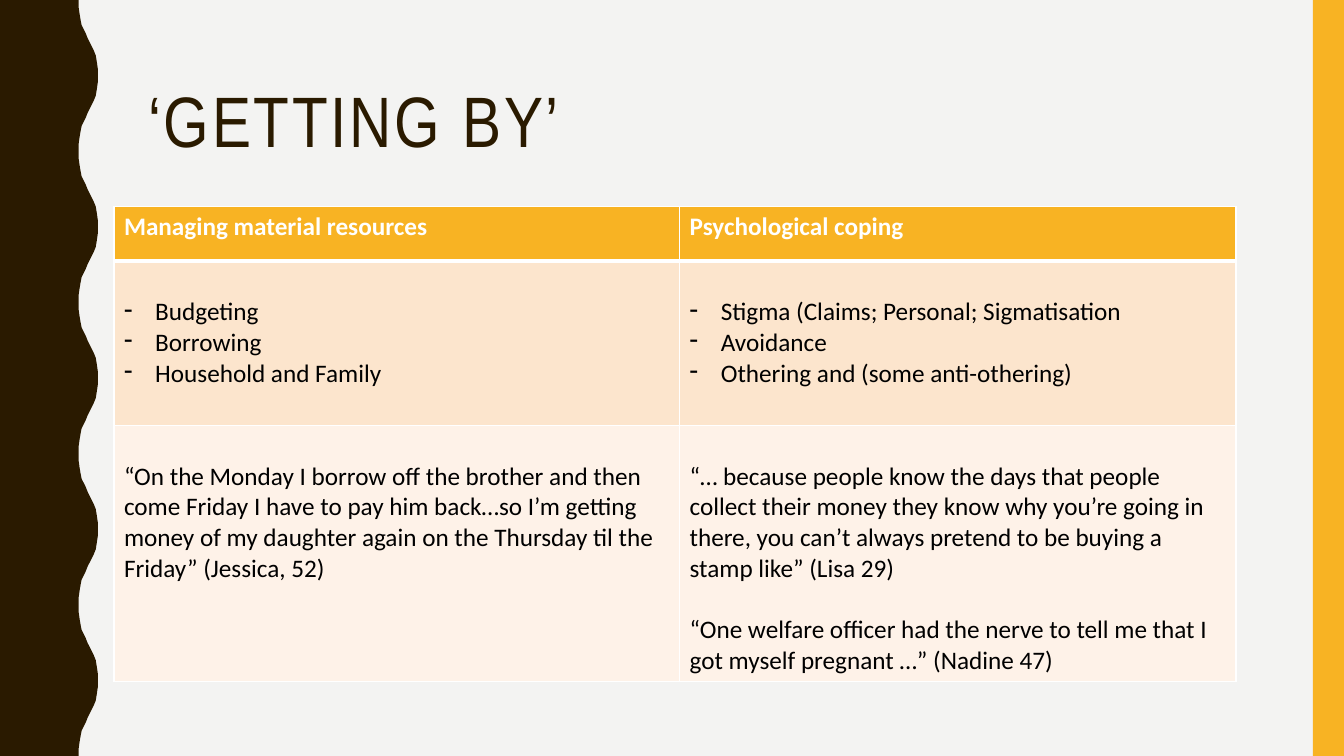
"""Build the 'Getting by' slide: a titled two-column table between a wavy band and a side bar."""
import pptx
import pptx.dml.color
import pptx.enum.shapes
import pptx.enum.text
import pptx.oxml
import pptx.oxml.ns
import pptx.util

Inches, Pt = pptx.util.Inches, pptx.util.Pt

TITLE = "‘GETTING BY’"
HEADINGS = ["Managing material resources", "Psychological coping"]
STRATEGIES = [
    ["Budgeting", "Borrowing", "Household and Family"],
    ["Stigma (Claims; Personal; Sigmatisation", "Avoidance",
     "Othering and (some anti-othering)"],
]
QUOTES = [
    ["“On the Monday I borrow off the brother and then come Friday I have to pay him "
     "back…so I’m getting money of my daughter again on the Thursday til the Friday” "
     "(Jessica, 52)"],
    ["“… because people know the days that people collect their money they know why "
     "you’re going in there, you can’t always pretend to be buying a stamp like” (Lisa 29)",
     "“One welfare officer had the nerve to tell me that I got myself pregnant …” "
     "(Nadine 47)"],
]
THEME = {
    "background": "F3F3F2", "dark": "2A1A00", "accent": "F8B323",
    "strategy_fill": "FCE5CD", "quote_fill": "FEF2E8",
    "white": "FFFFFF", "black": "000000",
    "title_font": "Arial Narrow", "body_font": "Calibri",
    "title_size": 51, "body_size": 18,
}
SLIDE_W, SLIDE_H = 13.33, 7.5
BAR_W = 0.31
TITLE_BOX = (1.37, 0.42, 11.13, 1.63)
TABLE_AT = (1.13, 2.05)
COLUMNS = [5.61, 5.52]
ROWS = [0.54, 1.63, 2.54]
LINE_H = 0.305
CELL_INSET = 0.05
INDENT = 0.31
WAVE_PERIOD = 1.5
HALF_WAVE = [
    (0.78, 0), (0.78, 0.07), (0.79, 0.14), (0.8, 0.2), (0.81, 0.25), (0.83, 0.29),
    (0.85, 0.33), (0.87, 0.38), (0.89, 0.42), (0.91, 0.46), (0.93, 0.5),
    (0.95, 0.55), (0.96, 0.61), (0.97, 0.68), (0.97, 0.75),
]


def color(name):
    return pptx.dml.color.RGBColor.from_string(THEME[name])


def paint(sp, name):
    sp.shadow.inherit = False
    sp.fill.solid()
    sp.fill.fore_color.rgb = color(name)
    sp.line.fill.background()


def add_run(p, text, kind, name, bold=False):
    r = p.add_run()
    r.text = text
    r.font.name = THEME[kind + "_font"]
    r.font.size = Pt(THEME[kind + "_size"])
    r.font.bold = bold
    r.font.color.rgb = color(name)
    return r


def add_wave(slide):
    mirrored = [(x, WAVE_PERIOD - y) for x, y in HALF_WAVE[-2::-1]]
    wave = HALF_WAVE + mirrored[:-1]
    edge = [(x, y + n * WAVE_PERIOD)
            for n in range(round(SLIDE_H / WAVE_PERIOD)) for x, y in wave]
    edge += [(HALF_WAVE[0][0], SLIDE_H), (0, SLIDE_H)]
    builder = slide.shapes.build_freeform(0, 0)
    builder.add_line_segments([(Inches(x), Inches(y)) for x, y in edge], close=True)
    paint(builder.convert_to_shape(), "dark")


def add_bar(slide):
    sp = slide.shapes.add_shape(
        pptx.enum.shapes.MSO_SHAPE.RECTANGLE,
        Inches(SLIDE_W - BAR_W), 0, Inches(BAR_W), Inches(SLIDE_H))
    paint(sp, "accent")


def add_title(slide):
    tf = slide.shapes.add_textbox(*map(Inches, TITLE_BOX)).text_frame
    tf.word_wrap = True
    tf.vertical_anchor = pptx.enum.text.MSO_ANCHOR.MIDDLE
    p = tf.paragraphs[0]
    p.line_spacing = 0.9
    r = add_run(p, TITLE, "title", "dark")
    r.font._element.set("spc", "200")


def set_borders(cell, top, bottom):
    props = cell._tc.get_or_add_tcPr()
    sides = [("L", 1), ("R", 1), ("T", top), ("B", bottom)]
    for i, (side, width) in enumerate(sides):
        props.insert(i, pptx.oxml.parse_xml(
            f'<a:ln{side} {pptx.oxml.ns.nsdecls("a")} w="{Pt(width)}"><a:solidFill>'
            f'<a:srgbClr val="{THEME["white"]}"/></a:solidFill></a:ln{side}>'))


def set_dash(p):
    props = p._p.get_or_add_pPr()
    props.set("marL", str(Inches(INDENT)))
    props.set("indent", str(-Inches(INDENT)))
    props.append(pptx.oxml.parse_xml(
        f'<a:buChar {pptx.oxml.ns.nsdecls("a")} char="-"/>'))


def fill_cell(cell, lines, row):
    fill = ["accent", "strategy_fill", "quote_fill"][row]
    cell.fill.solid()
    cell.fill.fore_color.rgb = color(fill)
    set_borders(cell, 3 if row == 1 else 1, 3 if row == 0 else 1)
    cell.margin_top = Inches(CELL_INSET + (LINE_H if row else 0))
    tf = cell.text_frame
    for i, line in enumerate(lines):
        p = tf.add_paragraph() if i else tf.paragraphs[0]
        if row == 1:
            set_dash(p)
        elif i:
            p.space_before = Inches(LINE_H)
        add_run(p, line, "body", "black" if row else "white", bold=row == 0)


def add_table(slide):
    size = (sum(COLUMNS), sum(ROWS))
    table = slide.shapes.add_table(
        len(ROWS), len(COLUMNS), *map(Inches, TABLE_AT + size)).table
    table.horz_banding = False
    for column, width in zip(table.columns, COLUMNS):
        column.width = Inches(width)
    for row, height in zip(table.rows, ROWS):
        row.height = Inches(height)
    content = [[[heading] for heading in HEADINGS], STRATEGIES, QUOTES]
    for i, row in enumerate(content):
        for j, lines in enumerate(row):
            fill_cell(table.cell(i, j), lines, i)


def main():
    prs = pptx.Presentation()
    prs.slide_width, prs.slide_height = Inches(SLIDE_W), Inches(SLIDE_H)
    slide = prs.slides.add_slide(prs.slide_layouts[6])
    slide.background.fill.solid()
    slide.background.fill.fore_color.rgb = color("background")
    add_wave(slide)
    add_bar(slide)
    add_title(slide)
    add_table(slide)
    prs.save("out.pptx")


if __name__ == "__main__":
    main()
